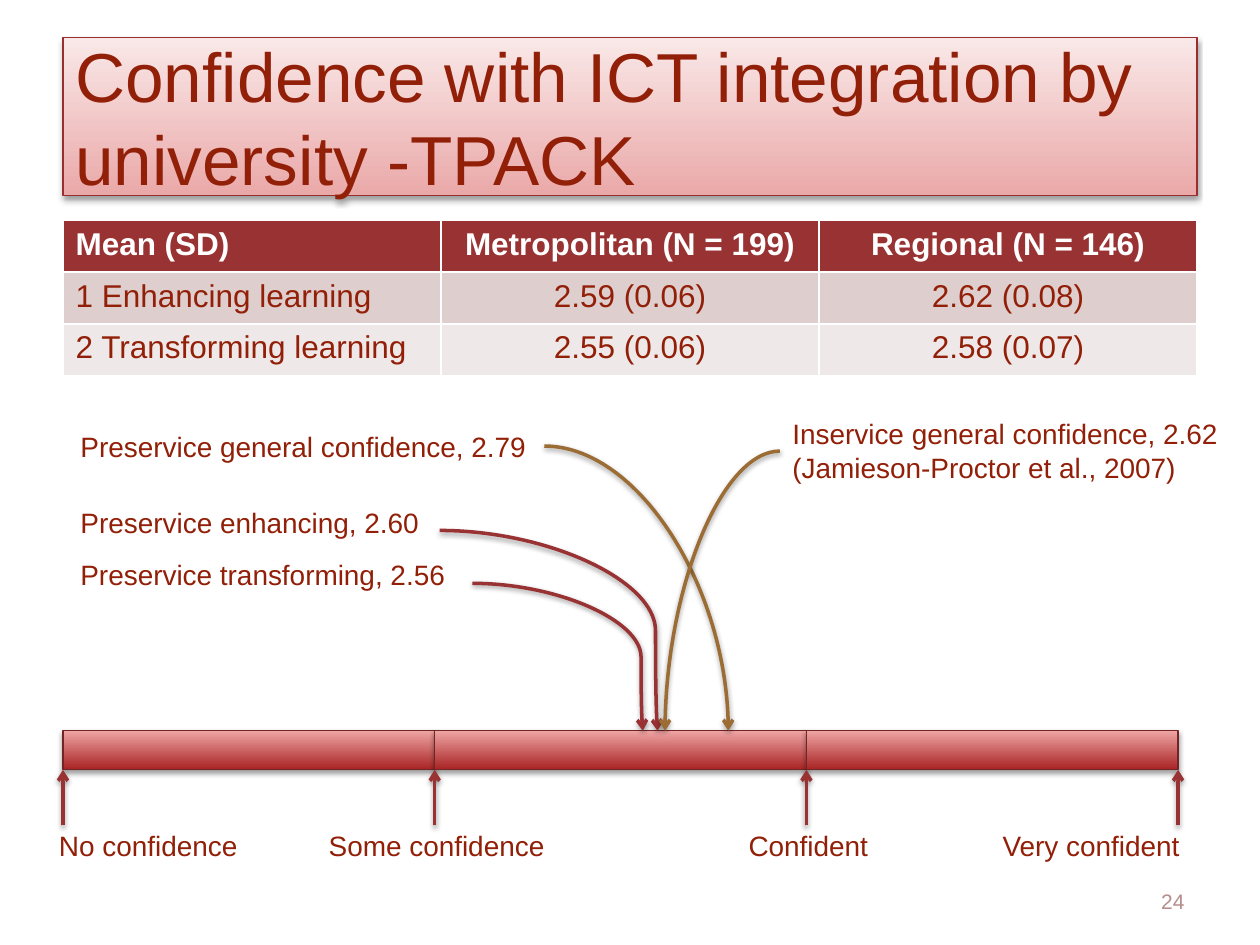
from lxml import etree
from pptx import Presentation
from pptx import util as u
from pptx.dml.color import RGBColor
from pptx.enum import shapes, text
from pptx.oxml import ns

FONT = "Arial"
BROWN = RGBColor(0x92, 0x1F, 0x07)
RED = RGBColor(0x99, 0x32, 0x32)
OCHRE = RGBColor(0x9B, 0x6C, 0x34)
WHITE = RGBColor(0xFF, 0xFF, 0xFF)
PAGE_GREY = RGBColor(0xB6, 0x8D, 0x8C)
TITLE_LINE = RGBColor(0x98, 0x2E, 0x2E)
TITLE_DARK = RGBColor(0xEA, 0xA9, 0xA9)
TITLE_LIGHT = RGBColor(0xFA, 0xE8, 0xE8)
BAR_LINE = RGBColor(0x73, 0x25, 0x25)
BAR_DARK = RGBColor(0xA8, 0x23, 0x23)
BAR_LIGHT = RGBColor(0xEF, 0xA4, 0xA4)
ROW_FILLS = (RED, RGBColor(0xDE, 0xCE, 0xCE), RGBColor(0xEF, 0xE8, 0xE8))

LEFT, CENTER, RIGHT = text.PP_ALIGN.LEFT, text.PP_ALIGN.CENTER, text.PP_ALIGN.RIGHT
STRAIGHT, CURVE = shapes.MSO_CONNECTOR.STRAIGHT, shapes.MSO_CONNECTOR.CURVE

SCALE_LEFT, SCALE_TOP, SCALE_STEP, SCALE_HEIGHT = 0.5, 5.8, 2.95, 0.31


def scale_x(score):
    """Horizontal place of a score from 1 to 4 on the confidence scale."""
    return SCALE_LEFT + (score - 1) * SCALE_STEP


def inches(*lengths):
    return [u.Inches(length) for length in lengths]


def write(frame, words, size=16, color=BROWN, bold=False, align=LEFT):
    paragraph = frame.paragraphs[0]
    paragraph.text = words
    paragraph.alignment = align
    for run in paragraph.runs:
        font = run.font
        font.name, font.size, font.bold = FONT, u.Pt(size), bold
        font.color.rgb = color


def add_shadow(properties):
    """Put a soft shadow below the shape that owns these properties."""
    effects = properties.find(ns.qn("a:effectLst"))
    if effects is None:
        effects = etree.SubElement(properties, ns.qn("a:effectLst"))
    shadow = etree.SubElement(effects, ns.qn("a:outerShdw"), blurRad=str(u.Pt(3.1)),
                              dist=str(u.Pt(1.6)), dir="5400000", rotWithShape="0")
    color = etree.SubElement(shadow, ns.qn("a:srgbClr"), val="000000")
    etree.SubElement(color, ns.qn("a:alpha"), val="38000")


class SlideBuilder:
    def __init__(self, slide):
        self.slide = slide

    def label(self, words, left, top, width, height=0.37, wrap=True, middle=False, **style):
        box = self.slide.shapes.add_textbox(*inches(left, top, width, height))
        frame = box.text_frame
        frame.word_wrap = wrap
        if middle:
            frame.vertical_anchor = text.MSO_ANCHOR.MIDDLE
        write(frame, words, **style)

    def panel(self, left, top, width, height, dark, light, line):
        """Rectangle shaded from dark at the bottom to light at the top."""
        shape = self.slide.shapes.add_shape(
            shapes.MSO_SHAPE.RECTANGLE, *inches(left, top, width, height))
        shape.fill.gradient()
        shape.fill.gradient_angle = 90
        for stop, color in zip(shape.fill.gradient_stops, (dark, light)):
            stop.color.rgb = color
        shape.line.color.rgb = line
        shape.line.width = u.Pt(0.75)
        shape.shadow.inherit = False
        add_shadow(shape._element.spPr)
        return shape

    def arrow(self, start, end, color=RED, kind=STRAIGHT, bend=None):
        """Arrow to end; a curve is a quarter turn unless bend places its middle."""
        connector = self.slide.shapes.add_connector(kind, *inches(*start, *end))
        connector.line.color.rgb = color
        connector.line.width = u.Pt(2)
        properties = connector._element.spPr
        etree.SubElement(connector.line._get_or_add_ln(), ns.qn("a:tailEnd"), type="arrow")
        add_shadow(properties)
        if kind == CURVE:
            geometry = properties.find(ns.qn("a:prstGeom"))
            if bend is None:
                geometry.set("prst", "curvedConnector2")
            else:
                connector_guides = geometry.find(ns.qn("a:avLst"))
                etree.SubElement(connector_guides, ns.qn("a:gd"), name="adj1",
                                 fmla=f"val {round(bend * 100000)}")

    def table(self, rows, left, top, width, row_height):
        table = self.slide.shapes.add_table(
            len(rows), len(rows[0]),
            *inches(left, top, width, row_height * len(rows))).table
        for r, row in enumerate(rows):
            for c, words in enumerate(row):
                cell = table.cell(r, c)
                cell.fill.solid()
                cell.fill.fore_color.rgb = ROW_FILLS[r]
                write(cell.text_frame, words, size=18, bold=r == 0,
                      color=BROWN if r else WHITE, align=CENTER if c else LEFT)


def main():
    presentation = Presentation()
    presentation.slide_width, presentation.slide_height = inches(10, 7.5)
    builder = SlideBuilder(presentation.slides.add_slide(presentation.slide_layouts[6]))

    title = builder.panel(0.5, 0.3, 9, 1.25, TITLE_DARK, TITLE_LIGHT, TITLE_LINE)
    title.text_frame.word_wrap = True
    title.text_frame.vertical_anchor = text.MSO_ANCHOR.MIDDLE
    write(title.text_frame, "Confidence with ICT integration by university -TPACK", size=39.6)

    builder.table([
        ("Mean (SD)", "Metropolitan (N = 199)", "Regional (N = 146)"),
        ("1 Enhancing learning", "2.59 (0.06)", "2.62 (0.08)"),
        ("2 Transforming learning", "2.55 (0.06)", "2.58 (0.07)"),
    ], 0.5, 1.75, 9, 0.41)

    for score in (1, 2, 3):
        builder.panel(scale_x(score), SCALE_TOP, SCALE_STEP, SCALE_HEIGHT,
                      BAR_DARK, BAR_LIGHT, BAR_LINE)

    scale_labels = [
        ("No confidence", 0.37, 1.86, LEFT),
        ("Some confidence", 2.49, 1.95, CENTER),
        ("Confident", 5.79, 1.25, CENTER),
        ("Very confident", 7.75, 1.71, RIGHT),
    ]
    for score, (words, left, width, align) in enumerate(scale_labels, start=1):
        builder.label(words, left, 6.53, width, align=align)
        builder.arrow((scale_x(score), 6.55), (scale_x(score), SCALE_TOP + SCALE_HEIGHT))

    # words, left, top, width, height, arrow start, score, color, bend
    findings = [
        ("Preservice enhancing, 2.60", 0.54, 3.96, 2.92, 0.37, (3.49, 4.21), 2.60, RED, 0.99),
        ("Preservice transforming, 2.56", 0.54, 4.38, 3.13, 0.37, (3.75, 4.63), 2.56, RED, 0.99),
        ("Preservice general confidence, 2.79", 0.54, 3.36, 3.78, 0.37,
         (4.32, 3.54), 2.79, OCHRE, None),
        ("Inservice general confidence, 2.62\n(Jamieson-Proctor et al., 2007)",
         6.19, 3.26, 3.62, 0.64, (6.19, 3.58), 2.62, OCHRE, None),
    ]
    for words, left, top, width, height, start, score, color, bend in findings:
        builder.arrow(start, (scale_x(score), SCALE_TOP), color, CURVE, bend)
        builder.label(words, left, top, width, height, wrap=False)

    builder.label("24", 7.17, 6.95, 2.33, 0.4, middle=True,
                  size=12, color=PAGE_GREY, align=RIGHT)
    presentation.save("out.pptx")


if __name__ == "__main__":
    main()
